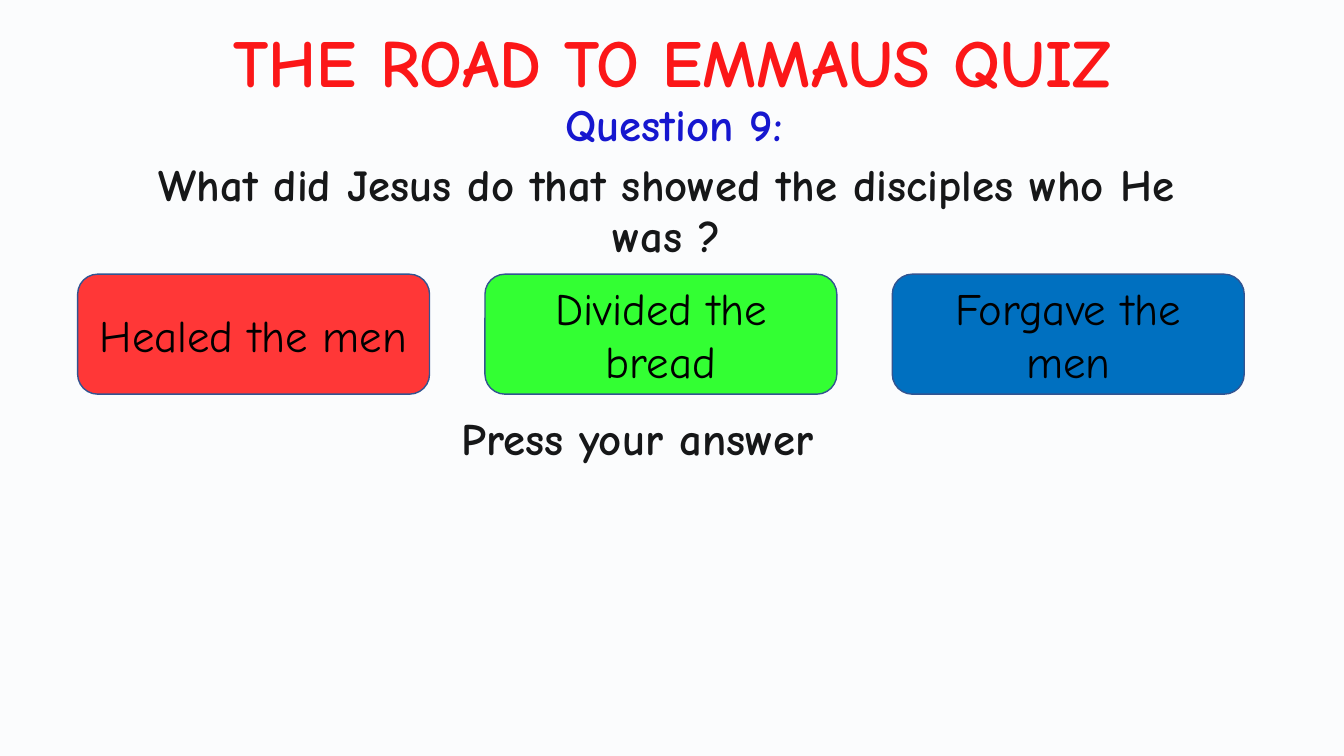
from lxml import etree
from pptx import Presentation
from pptx.dml.color import RGBColor as Rgb
from pptx.enum.shapes import MSO_SHAPE as Shape
from pptx.enum.text import MSO_ANCHOR as Anchor, MSO_AUTO_SIZE as Fit, PP_ALIGN as Align
from pptx.oxml.ns import qn
from pptx.util import Inches, Pt

WIDE, HIGH = 13.33, 7.5
FONT = "Comic Neue"
COLORS = {
    "title": "FF0000", "number": "0000CC", "text": "000000",
    "red": "FF3737", "green": "33FF33", "blue": "0070C0",
    "edge": "325491", "veil": "DAE3F3", "back": "FFFFFF",
}
ANSWERS = [("Healed the men", "red"), ("Divided the bread", "green"),
           ("Forgave the men", "blue")]


def tone(name):
    return Rgb.from_string(COLORS[name])


def write(shape, text, size=32, color="text", bold=True, align=Align.CENTER,
          anchor=Anchor.TOP, before=0, lines=None):
    frame = shape.text_frame
    frame.auto_size = Fit.NONE
    frame.word_wrap = True
    frame.vertical_anchor = anchor
    frame.text = text
    para = frame.paragraphs[0]
    para.alignment = align
    para.space_before = Pt(before)
    para.line_spacing = lines
    font = para.font
    font.name, font.size, font.bold = FONT, Pt(size), bold
    font.color.rgb = tone(color)


def add_title(slide, left, top, width, height):
    title = slide.shapes.title
    title.left, title.top = Inches(left), Inches(top)
    title.width, title.height = Inches(width), Inches(height)
    write(title, "THE ROAD TO EMMAUS QUIZ", size=48, color="title")
    title.text_frame.word_wrap = False


def add_label(slide, box, text, **style):
    label = slide.shapes.add_textbox(*map(Inches, box))
    write(label, text, **style)


def add_panel(slide, box, kind, color):
    panel = slide.shapes.add_shape(kind, *map(Inches, box))
    panel.shadow.inherit = False
    panel.fill.solid()
    panel.fill.fore_color.rgb = tone(color)
    return panel


def add_veil(slide, box):
    """Lay a pale tint, one tenth opaque, over the box."""
    veil = add_panel(slide, box, Shape.RECTANGLE, "veil")
    veil.line.fill.background()
    fill = veil.fill._xPr.find(qn("a:solidFill"))
    etree.SubElement(fill[0], qn("a:alpha"), val="10000")


def add_answers(slide, left, top, width, height, gap=0.55):
    """Share the box among the answer buttons."""
    count = len(ANSWERS)
    wide = (width - gap * (count - 1)) / count
    for i, (text, color) in enumerate(ANSWERS):
        box = (left + i * (wide + gap), top, wide, height)
        button = add_panel(slide, box, Shape.ROUNDED_RECTANGLE, color)
        button.line.color.rgb = tone("edge")
        button.line.width = Pt(1)
        write(button, text, bold=False, anchor=Anchor.MIDDLE)


def add_quiz(deck):
    slide = deck.slides.add_slide(deck.slide_layouts[5])
    slide.background.fill.solid()
    slide.background.fill.fore_color.rgb = tone("back")
    add_title(slide, 1.31, 0.15, 10.72, 0.91)
    add_label(slide, (1.28, 1.52, 10.67, 1.19),
              "What did Jesus do that showed the disciples who He was ?",
              before=10, lines=Pt(37))
    add_label(slide, (4.48, 4.09, 6.73, 0.72), "Press your answer",
              align=Align.LEFT, before=7.5, lines=0.9)
    add_label(slide, (4.48, 0.91, 4.41, 0.64), "Question 9:", color="number")
    add_veil(slide, (0, 0, WIDE, HIGH))
    add_answers(slide, 0.77, 2.72, 11.57, 1.19)


def main():
    deck = Presentation()
    deck.slide_width, deck.slide_height = Inches(WIDE), Inches(HIGH)
    add_quiz(deck)
    deck.save("out.pptx")


if __name__ == "__main__":
    main()
